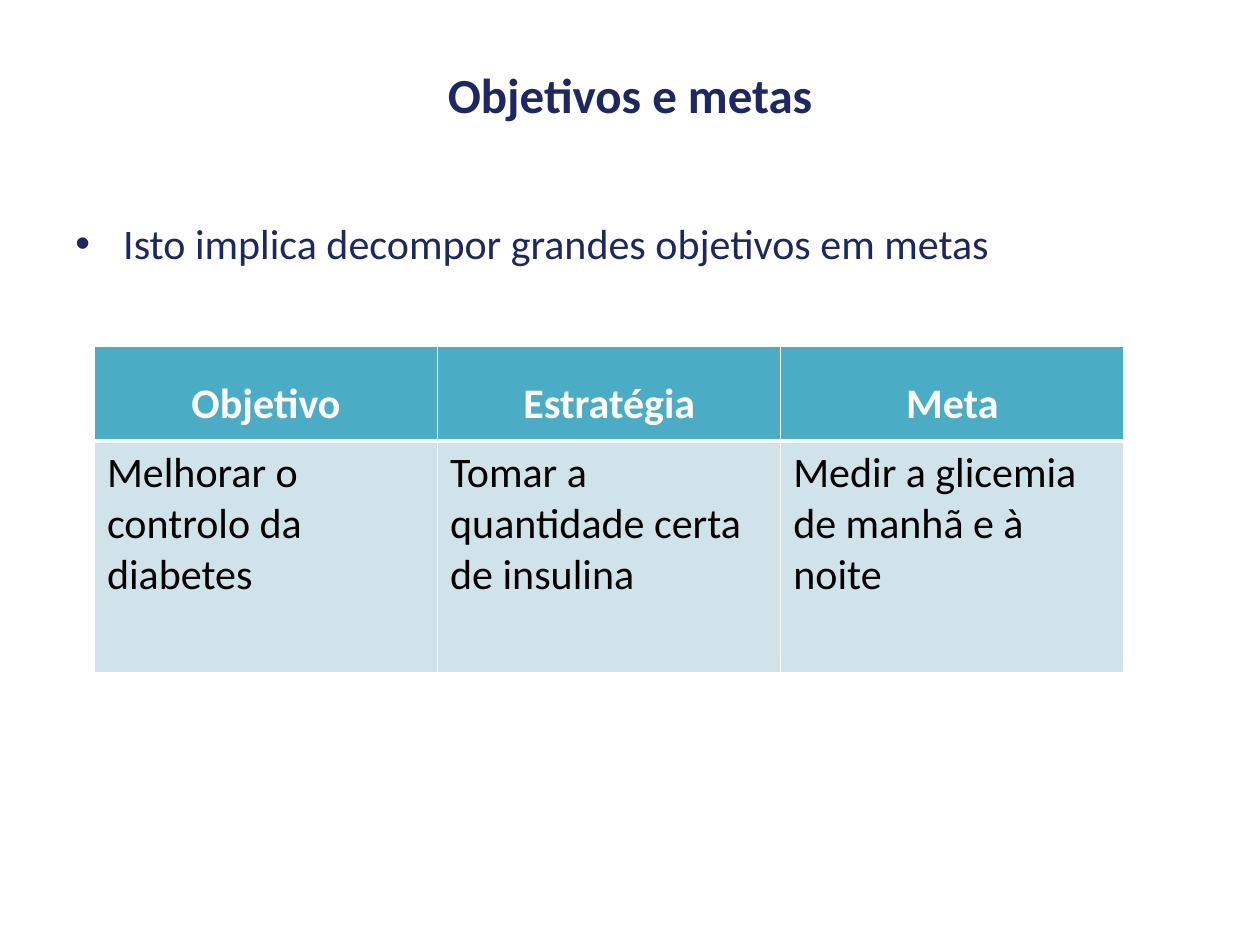
from lxml.etree import SubElement
from pptx import Presentation
from pptx.dml.color import RGBColor
from pptx.enum.text import MSO_ANCHOR, PP_ALIGN
from pptx.oxml.ns import qn
from pptx.util import Inches, Pt

HUES = {"navy": "1D2763", "teal": "4BACC6", "pale": "D0E3EA",
        "white": "FFFFFF", "black": "000000"}

deck = Presentation()
deck.slide_width, deck.slide_height = Inches(10), Inches(7.5)
slide = deck.slides.add_slide(deck.slide_layouts[5])
edge, wide = Inches(0.5), deck.slide_width - Inches(1)


def write(frame, text, hue, **style):
    frame.word_wrap = True
    para = frame.paragraphs[0]
    run = para.add_run()
    run.text = text
    for name, value in ({"name": "Calibri", "size": Pt(24)} | style).items():
        setattr(run.font, name, value)
    run.font.color.rgb = RGBColor.from_string(HUES[hue])
    return para


def rule(cell, widths):
    props = cell._tc.get_or_add_tcPr()
    for side, width in zip("LRTB", widths):
        line = SubElement(props, qn(f"a:ln{side}"), w=str(Pt(width)))
        fill = SubElement(line, qn("a:solidFill"))
        SubElement(fill, qn("a:srgbClr"), val=HUES["white"])


# Title
title = slide.shapes.title
place = {"left": edge, "top": Inches(0.32), "width": wide, "height": Inches(0.85)}
for name, value in place.items():
    setattr(title, name, value)
title.text_frame.vertical_anchor = MSO_ANCHOR.MIDDLE
para = write(title.text_frame, "Objetivos e metas", "navy", size=Pt(28), bold=True)
para.alignment = PP_ALIGN.CENTER

# Bullet
body = slide.shapes.add_textbox(edge, Inches(1.68), wide, Inches(0.6))
para = write(body.text_frame, "Isto implica decompor grandes objetivos em metas", "navy")
props = para._p.get_or_add_pPr()
dent = Inches(0.38)
props.set("marL", str(dent))
props.set("indent", str(-dent))
SubElement(props, qn("a:buFont"), typeface="Arial")
SubElement(props, qn("a:buChar"), char="•")

# Table: a header row over one row of examples
rows = [
    ["Objetivo", "Estratégia", "Meta"],
    ["Melhorar o controlo da diabetes", "Tomar a quantidade certa de insulina",
     "Medir a glicemia de manhã e à noite"],
]
looks = [
    {"fill": "teal", "text": "white", "bold": True, "align": PP_ALIGN.CENTER,
     "space": 1.5, "lines": (1, 1, 1, 3), "high": 0.75},
    {"fill": "pale", "text": "black", "bold": False, "align": PP_ALIGN.LEFT,
     "space": 1.0, "lines": (1, 1, 3, 1), "high": 1.84},
]
table = slide.shapes.add_table(2, 3, Inches(0.75), Inches(2.75),
                               Inches(8.17), Inches(2.59)).table
for r, (row, look) in enumerate(zip(rows, looks)):
    table.rows[r].height = Inches(look["high"])
    for c, text in enumerate(row):
        cell = table.cell(r, c)
        rule(cell, look["lines"])
        cell.fill.solid()
        cell.fill.fore_color.rgb = RGBColor.from_string(HUES[look["fill"]])
        para = write(cell.text_frame, text, look["text"], bold=look["bold"])
        para.alignment = look["align"]
        para.line_spacing = look["space"]

deck.save("out.pptx")
